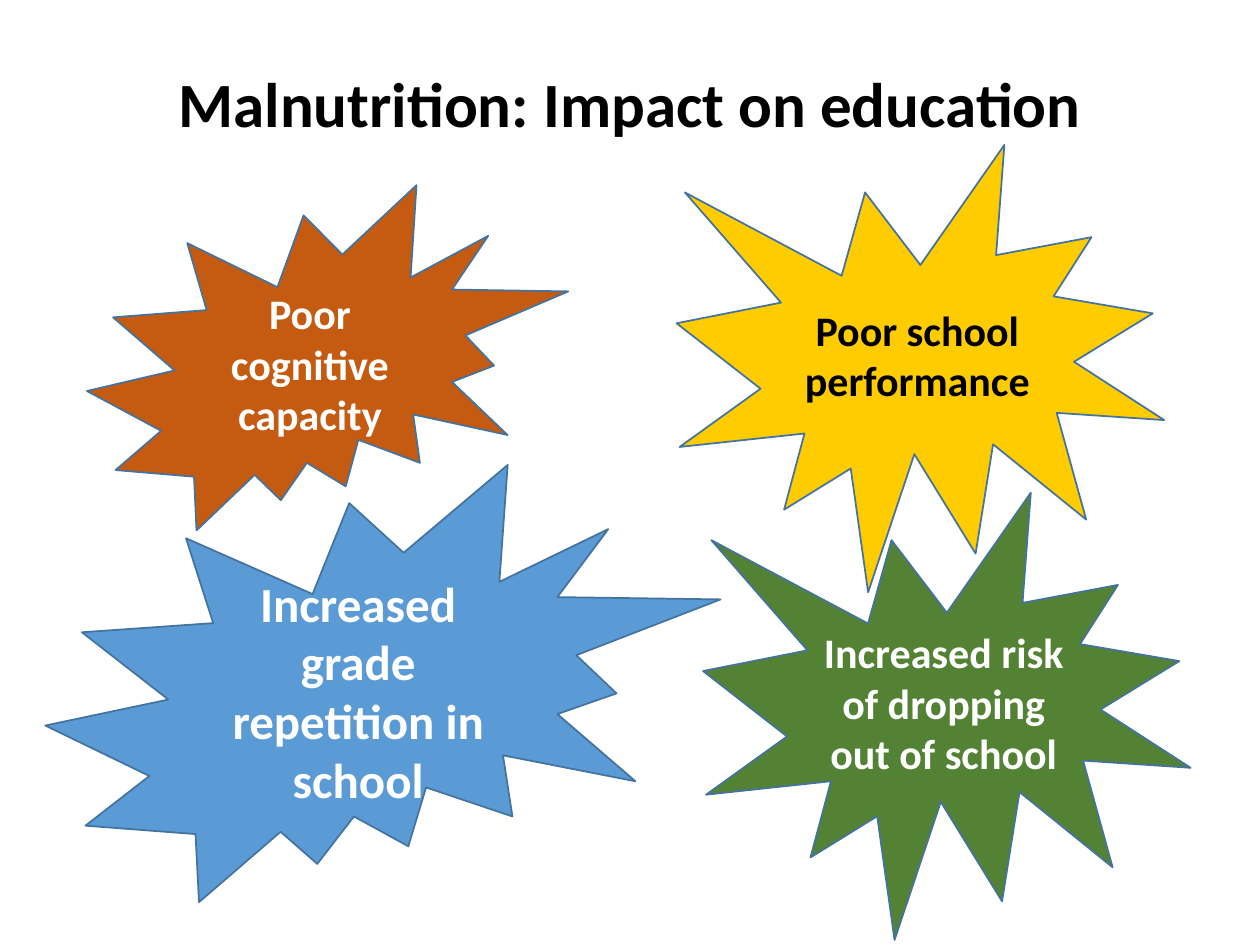
"""Build a slide on how malnutrition affects education."""
import pptx
import pptx.dml.color
import pptx.enum.shapes
import pptx.enum.text
import pptx.util

RGBColor = pptx.dml.color.RGBColor
MSO_SHAPE = pptx.enum.shapes.MSO_SHAPE

BLACK = RGBColor(0x00, 0x00, 0x00)
WHITE = RGBColor(0xFF, 0xFF, 0xFF)
RUST = RGBColor(0xC5, 0x5A, 0x11)
YELLOW = RGBColor(0xFF, 0xCC, 0x00)
BLUE = RGBColor(0x5B, 0x9B, 0xD5)
GREEN = RGBColor(0x54, 0x82, 0x35)
OUTLINE = RGBColor(0x43, 0x73, 0x9E)

SLIDE_WIDTH = pptx.util.Inches(10)
SLIDE_HEIGHT = pptx.util.Inches(7.5)
COLUMNS, ROWS = 100, 75
SMALL_BURST = (38.7, 35.5)

IMPACTS = [
    ("Poor cognitive capacity", MSO_SHAPE.EXPLOSION2,
     (6.9, 14.7, 38.2, 27.4), RUST, WHITE, 24),
    ("Poor school performance", MSO_SHAPE.EXPLOSION1,
     (53.7, 11.5, *SMALL_BURST), YELLOW, BLACK, 24),
    ("Increased grade repetition in school", MSO_SHAPE.EXPLOSION2,
     (3.6, 36.9, 53.6, 34.7), BLUE, WHITE, 28),
    ("Increased risk of dropping out of school", MSO_SHAPE.EXPLOSION1,
     (55.8, 39.1, *SMALL_BURST), GREEN, WHITE, 24),
]


def grid_box(box):
    """Turn left, top, width and height in grid units into slide lengths."""
    column, row = SLIDE_WIDTH / COLUMNS, SLIDE_HEIGHT / ROWS
    return [round(share * unit) for share, unit in zip(box, (column, row) * 2)]


def write_centred(frame, text, size, color):
    """Write one bold centred paragraph in the middle of a text frame."""
    frame.word_wrap = True
    frame.vertical_anchor = pptx.enum.text.MSO_ANCHOR.MIDDLE
    paragraph = frame.paragraphs[0]
    paragraph.alignment = pptx.enum.text.PP_ALIGN.CENTER
    run = paragraph.add_run()
    run.text = text
    run.font.name = "Calibri"
    run.font.size = pptx.util.Pt(size)
    run.font.bold = True
    run.font.color.rgb = color
    return paragraph


def place_title(slide, box, text):
    """Move the title placeholder into the box and write the heading."""
    heading = slide.shapes.title
    heading.left, heading.top, heading.width, heading.height = grid_box(box)
    write_centred(heading.text_frame, text, 36, BLACK).line_spacing = 0.9


def add_burst(slide, box, text, outline, fill, ink, size):
    """Add one impact as a filled burst within the box."""
    burst = slide.shapes.add_shape(outline, *grid_box(box))
    burst.shadow.inherit = False
    burst.fill.solid()
    burst.fill.fore_color.rgb = fill
    burst.line.color.rgb = OUTLINE
    burst.line.width = pptx.util.Pt(1)
    write_centred(burst.text_frame, text, size, ink)


def main():
    """Build and save the slide."""
    deck = pptx.Presentation()
    deck.slide_width, deck.slide_height = SLIDE_WIDTH, SLIDE_HEIGHT
    slide = deck.slides.add_slide(deck.slide_layouts.get_by_name("Title Only"))
    place_title(slide, (6.9, 4, 86.2, 9), "Malnutrition: Impact on education")
    for text, outline, box, fill, ink, size in IMPACTS:
        add_burst(slide, box, text, outline, fill, ink, size)
    deck.save("out.pptx")


if __name__ == "__main__":
    main()
